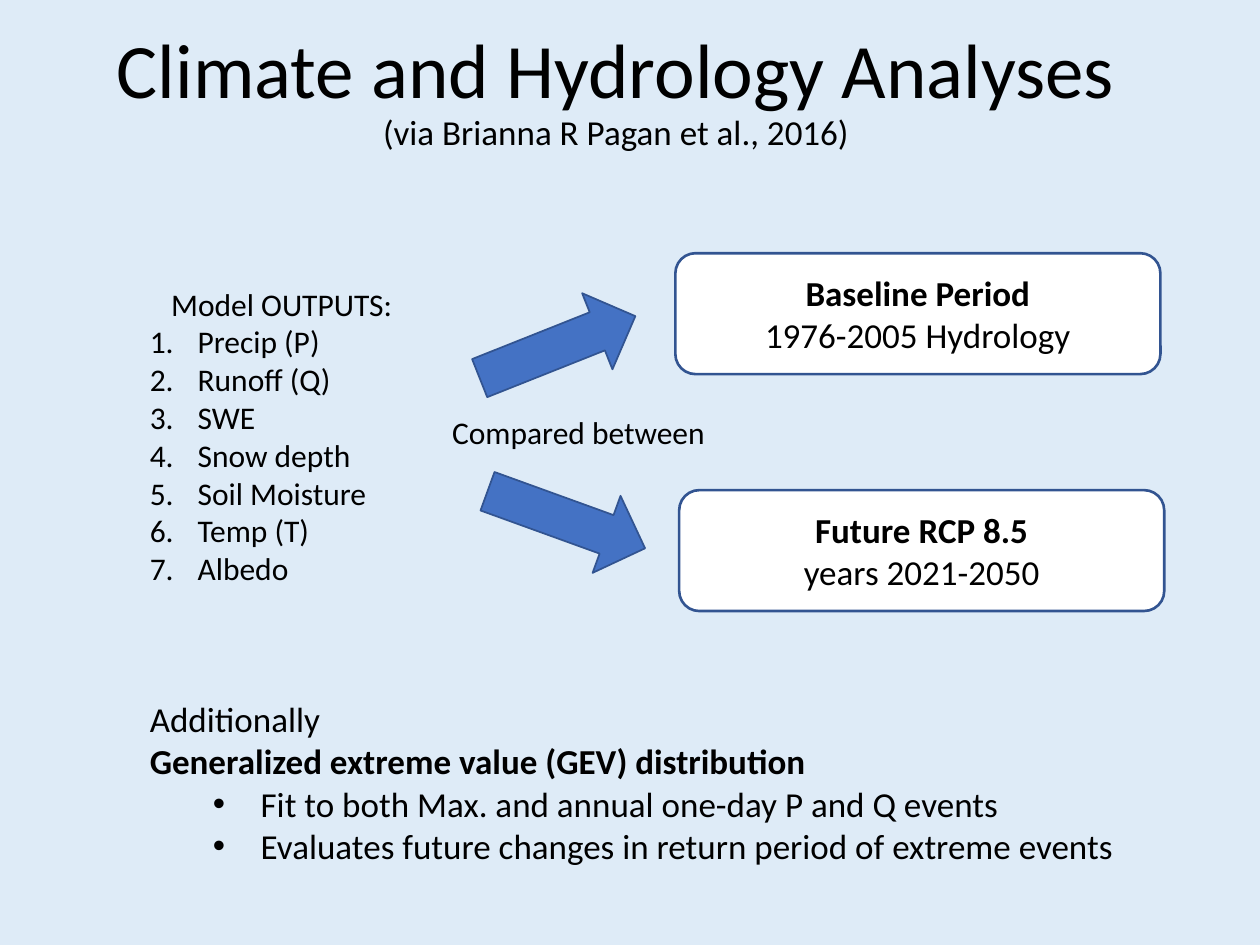
from lxml import etree
from pptx import Presentation
from pptx import util as u
from pptx.dml.color import RGBColor
from pptx.enum import shapes, text
from pptx.oxml.ns import qn

HEADING = "Climate and Hydrology Analyses"
CITATION = "(via Brianna R Pagan et al., 2016)"
OUTPUTS_LABEL = "Model OUTPUTS:"
OUTPUTS = ["Precip (P)", "Runoff (Q)", "SWE", "Snow depth",
           "Soil Moisture", "Temp (T)", "Albedo"]
COMPARISON = "Compared between"
PERIODS = [
    {"name": "Baseline Period", "years": "1976-2005 Hydrology", "corner": (5.36, 2.01)},
    {"name": "Future RCP 8.5", "years": "years 2021-2050", "corner": (5.39, 3.89)},
]
ARROWS = [{"corner": (4.1, 2.09), "angle": 248.3},
          {"corner": (4.17, 3.46), "angle": 289.9}]
ADDITION = "Additionally"
METHOD = "Generalized extreme value (GEV) distribution"
METHOD_POINTS = ["Fit to both Max. and annual one-day P and Q events",
                 "Evaluates future changes in return period of extreme events"]

THEME = {
    "font": "Calibri", "bullet_font": "Arial",
    "background": "DEEBF7", "ink": "000000", "card": "FFFFFF",
    "arrow": "4472C4", "outline": "325491",
    "heading": 44, "body": 20, "label": 18,
}
PERIOD_SIZE = (3.85, 0.96)
ARROW_SIZE = (0.65, 1.33)
HANGING = 0.38


def color(role):
    return RGBColor.from_string(THEME[role])


def add_paragraph(frame, content, size="body", bold=False, align=None,
                  margin=0, hanging=0, marker=None, level=0):
    first = frame.paragraphs[0]
    paragraph = frame.add_paragraph() if first.runs else first
    paragraph.level = level
    props = paragraph._p.get_or_add_pPr()
    props.set("marL", str(u.Inches(margin)))
    props.set("indent", str(-u.Inches(hanging)))
    if marker == "number":
        etree.SubElement(props, qn("a:buAutoNum"), type="arabicPeriod")
    elif marker:
        etree.SubElement(props, qn("a:buFont"), typeface=THEME["bullet_font"])
        etree.SubElement(props, qn("a:buChar"), char=marker)
    paragraph.alignment = align
    add_run(paragraph, content, size, bold)
    return paragraph


def add_run(paragraph, content, size, bold=False):
    run = paragraph.add_run()
    run.text = content
    run.font.name = THEME["font"]
    run.font.size = u.Pt(THEME[size])
    run.font.bold = bold
    run.font.color.rgb = color("ink")


def add_box(slide, *bounds, anchor=text.MSO_ANCHOR.TOP):
    frame = slide.shapes.add_textbox(*map(u.Inches, bounds)).text_frame
    frame.word_wrap = True
    frame.vertical_anchor = anchor
    return frame


def add_figure(slide, preset, corner, size, fill, weight):
    figure = slide.shapes.add_shape(preset, *map(u.Inches, corner + size))
    figure.shadow.inherit = False
    figure.fill.solid()
    figure.fill.fore_color.rgb = color(fill)
    figure.line.color.rgb = color("outline")
    figure.line.width = u.Pt(weight)
    return figure


def main():
    deck = Presentation()
    deck.slide_width, deck.slide_height = u.Inches(10), u.Inches(7.5)
    slide = deck.slides.add_slide(deck.slide_layouts[6])
    slide.background.fill.solid()
    slide.background.fill.fore_color.rgb = color("background")
    center = text.PP_ALIGN.CENTER

    title = add_box(slide, 0.58, 0.01, 8.62, 1.45, anchor=text.MSO_ANCHOR.MIDDLE)
    heading = add_paragraph(title, HEADING, size="heading", align=center)
    heading.line_spacing = 0.9
    heading.add_line_break()
    add_run(heading, CITATION, "body")

    outputs = add_box(slide, 1.09, 2.21, 2.65, 2.52)
    add_paragraph(outputs, OUTPUTS_LABEL, size="label", margin=0.17)
    for output in OUTPUTS:
        add_paragraph(outputs, output, size="label", margin=HANGING,
                      hanging=HANGING, marker="number")

    for arrow in ARROWS:
        figure = add_figure(slide, shapes.MSO_SHAPE.DOWN_ARROW, arrow["corner"],
                            ARROW_SIZE, "arrow", 1)
        figure.rotation = arrow["angle"]

    add_paragraph(add_box(slide, 3.49, 3.23, 2.94, 0.4), COMPARISON, size="label")

    for period in PERIODS:
        card = add_figure(slide, shapes.MSO_SHAPE.ROUNDED_RECTANGLE,
                          period["corner"], PERIOD_SIZE, "card", 1.5).text_frame
        card.vertical_anchor = text.MSO_ANCHOR.MIDDLE
        add_paragraph(card, period["name"], bold=True, align=center)
        add_paragraph(card, period["years"], align=center)

    addition = add_box(slide, 1.09, 5.49, 7.91, 1.45)
    add_paragraph(addition, ADDITION)
    add_paragraph(addition, METHOD, bold=True)
    for point in METHOD_POINTS:
        add_paragraph(addition, point, margin=0.5 + HANGING, hanging=HANGING,
                      marker="•", level=1)

    deck.save("out.pptx")


if __name__ == "__main__":
    main()
